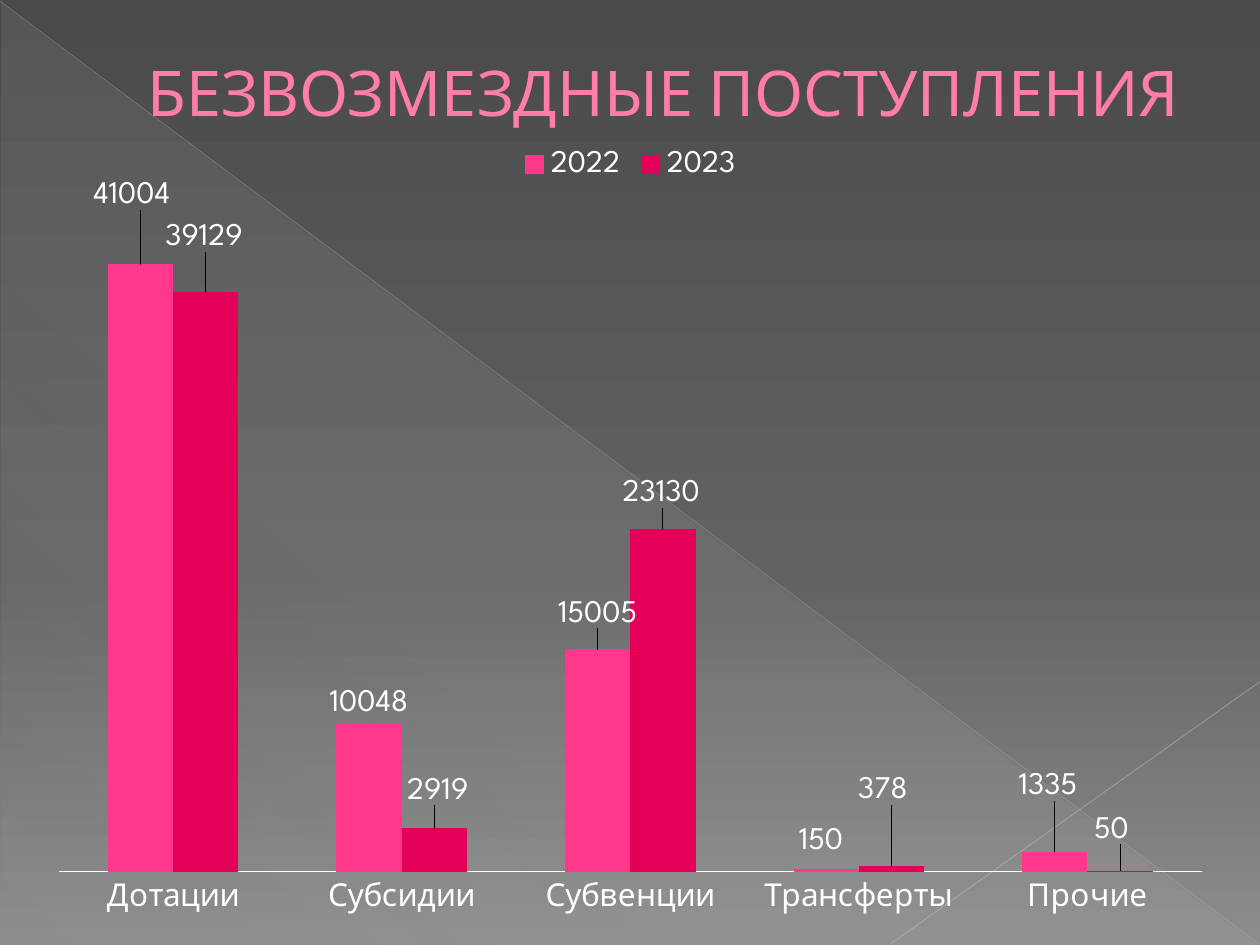
from lxml.etree import SubElement
from pptx import Presentation
from pptx.chart.data import CategoryChartData
from pptx.dml.color import RGBColor
from pptx.enum.chart import XL_CHART_TYPE as ChartType
from pptx.enum.chart import XL_LABEL_POSITION as LabelPos
from pptx.enum.chart import XL_LEGEND_POSITION as LegendPos
from pptx.enum.chart import XL_TICK_LABEL_POSITION as TickLabelPos
from pptx.enum.chart import XL_TICK_MARK as TickMark
from pptx.enum.shapes import MSO_CONNECTOR as Connector
from pptx.enum.shapes import MSO_SHAPE as Shape
from pptx.enum.text import MSO_ANCHOR as Anchor
from pptx.enum.text import PP_ALIGN as Align
from pptx.oxml.ns import qn
from pptx.util import Pt

COLORS = {
    "top": "4A4A4A", "middle": "626262", "bottom": "8C8C8C",
    "sheen": "D2D2D2", "diagonal": "BFBFBF", "crossing": "C6C6C6",
    "title": "FF7DA7", "outline": "B12761", "text": "FFFFFF",
    "2022": "FF388C", "2023": "E40059",
}
CATEGORIES = ["Дотации", "Субсидии", "Субвенции", "Трансферты", "Прочие"]
VALUES = {
    "2022": [41004, 10048, 15005, 150, 1335],
    "2023": [39129, 2919, 23130, 378, 50],
}
# Shift of each label from its usual place above the column, in points
LABEL_SHIFTS = {
    "2022": [(-5, -28), (0, 0), (0, -9), (-3, -5), (-4, -26)],
    "2023": [(-1, -20), (2, -10), (-1, -9), (-5, -32), (-5, -12)],
}


def rgb(name):
    return RGBColor.from_string(COLORS[name])


def add_color(parent, name, alpha=100):
    color = SubElement(parent, qn("a:srgbClr"), val=COLORS[name])
    if alpha < 100:
        SubElement(color, qn("a:alpha"), val=str(alpha * 1000))


def set_gradient(owner, fill, stops, angle):
    """Fill with (position, colour, opacity) stops; the angle runs clockwise."""
    fill.gradient()
    gradient = owner.find(".//" + qn("a:gradFill"))
    for child in list(gradient):
        gradient.remove(child)
    stop_list = SubElement(gradient, qn("a:gsLst"))
    for position, name, alpha in stops:
        stop = SubElement(stop_list, qn("a:gs"), pos=str(position * 1000))
        add_color(stop, name, alpha)
    SubElement(gradient, qn("a:lin"), ang=str(angle * 60000), scaled="0")


def add_layout(parent, index, **settings):
    """Give a chart part a manual layout, as its child number index."""
    layout = SubElement(parent, qn("c:layout"))
    parent.insert(index, layout)
    manual = SubElement(layout, qn("c:manualLayout"))
    for name, value in settings.items():
        SubElement(manual, qn(f"c:{name}"), val=str(value))


class SlideBuilder:
    font = "League Spartan"

    def __init__(self, deck):
        self.page = deck.slides.add_slide(deck.slide_layouts[5])

    def background(self, stops, angle):
        set_gradient(self.page.element, self.page.background.fill, stops, angle)

    def triangle(self, left, top, width, height, stops, angle):
        shape = self.page.shapes.add_shape(
            Shape.RIGHT_TRIANGLE, Pt(left), Pt(top), Pt(width), Pt(height))
        shape.shadow.inherit = False
        shape.line.fill.background()
        set_gradient(shape.element, shape.fill, stops, angle)

    def line(self, start, end, color, width, alpha):
        line = self.page.shapes.add_connector(
            Connector.STRAIGHT, *map(Pt, start + end))
        line.line.width = Pt(width)
        line.line.color.rgb = rgb(color)
        props = line.element.spPr
        SubElement(props.find(".//" + qn("a:srgbClr")), qn("a:alpha"),
                   val=str(alpha * 1000))
        SubElement(props, qn("a:effectLst"))

    def title(self, text, left, top, width, height, size, indent):
        box = self.page.shapes.title
        box.left, box.top, box.width, box.height = map(
            Pt, (left, top, width, height))
        frame = box.text_frame
        frame.word_wrap = True
        frame.vertical_anchor = Anchor.MIDDLE
        para = frame.paragraphs[0]
        para.alignment = Align.CENTER
        span = para.add_run()
        span.text = text
        font = span.font
        font.name, font.size = self.font, Pt(size)
        font.color.rgb = rgb("title")
        para._p.get_or_add_pPr().set("marL", str(Pt(indent)))
        props = span._r.get_or_add_rPr()
        outline = SubElement(props, qn("a:ln"), w=str(Pt(0.5)))
        props.insert(0, outline)
        add_color(SubElement(outline, qn("a:solidFill")), "outline")
        box.element.getparent().append(box.element)

    def column_chart(self, left, top, width, height, size):
        data = CategoryChartData()
        data.categories = CATEGORIES
        for name, values in VALUES.items():
            data.add_series(name, values)
        chart = self.page.shapes.add_chart(
            ChartType.COLUMN_CLUSTERED, Pt(left), Pt(top), Pt(width),
            Pt(height), data).chart
        chart.has_title = False
        chart.font.name, chart.font.size = self.font, Pt(size)
        chart.font.color.rgb = rgb("text")
        chart.has_legend = True
        chart.legend.position = LegendPos.TOP
        chart.legend.include_in_layout = False

        axis = chart.category_axis
        axis.major_tick_mark = TickMark.NONE
        axis.tick_label_position = TickLabelPos.LOW
        axis.format.line.color.rgb = rgb("text")
        axis.format.line.width = Pt(0.75)
        values = chart.value_axis
        values.minimum_scale, values.maximum_scale = 0, 45000
        values.has_major_gridlines = False
        values.visible = False

        plot = chart.plots[0]
        plot.gap_width, plot.overlap = 150, 0
        plot.vary_by_categories = False
        area = plot._element.getparent()
        for old in area.findall(qn("c:layout")):
            area.remove(old)
        add_layout(area, 0, layoutTarget="inner", xMode="edge", yMode="edge",
                   x=0.02, y=0.09, w=0.96, h=0.85)
        for series in plot.series:
            series.format.fill.solid()
            series.format.fill.fore_color.rgb = rgb(series.name)
            self.value_labels(series, width, height)

    def value_labels(self, series, width, height):
        labels = series.data_labels
        labels.show_value = True
        labels.position = LabelPos.OUTSIDE_END
        shifts = LABEL_SHIFTS[series.name]
        for index in range(len(shifts)):
            series.points[index].data_label.position = LabelPos.OUTSIDE_END
        marks = series._element.findall(".//" + qn("c:dLbl"))
        for mark, (across, down) in zip(marks, shifts):
            add_layout(mark, 1, x=round(across / width, 4),
                       y=round(down / height, 4))


def main():
    deck = Presentation()
    deck.slide_width, deck.slide_height = Pt(720), Pt(540)
    slide = SlideBuilder(deck)
    slide.background(
        [(0, "top", 100), (60, "middle", 100), (100, "bottom", 100)], 90)
    slide.triangle(0.7, 1.4, 718.6, 538.6,
                   [(0, "sheen", 10), (70, "sheen", 8), (100, "sheen", 1)], 133)
    slide.line((0, 0.7), (719.3, 539.3), "diagonal", 0.39, 35)
    slide.line((720, 389.5), (509, 539.3), "crossing", 0.47, 45)
    slide.title("БЕЗВОЗМЕЗДНЫЕ ПОСТУПЛЕНИЯ", 36, 21, 648, 62, 36, 38)
    slide.column_chart(20, 77, 680.4, 448, 18)
    deck.save("out.pptx")


if __name__ == "__main__":
    main()
